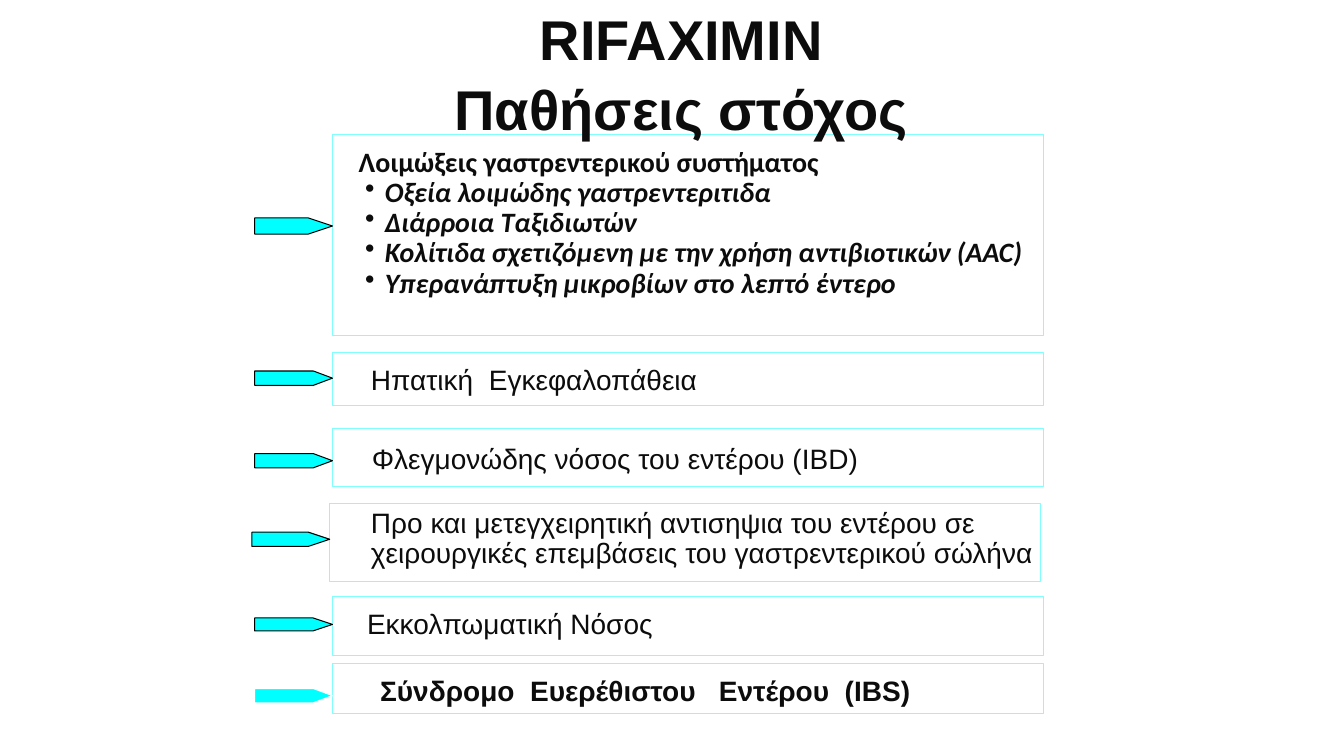
from lxml import etree
from pptx import Presentation
from pptx import util as u
from pptx.dml.color import RGBColor
from pptx.enum import shapes, text
from pptx.oxml import ns

COLORS = {"ink": "0C0C0C", "frame": "81FFFF", "arrow": "00FFFF",
          "outline": "000000", "paper": "FFFFFF"}
FRAME_WIDTH = 17.91
ARROW_WIDTH = 1.96
TEXT_WIDTH = 17.3

INFECTIONS = [
    "Οξεία λοιμώδης γαστρεντεριτιδα",
    "Διάρροια Ταξιδιωτών",
    "Κολίτιδα σχετιζόμενη με την χρήση αντιβιοτικών (AAC)",
    "Υπερανάπτυξη μικροβίων στο λεπτό έντερο",
]


def write(frame, words, *, first=False, size=20, font="Arial", bold=False,
          italic=False, align=text.PP_ALIGN.LEFT, spacing=0.9, before=0,
          bullet=False):
    para = frame.paragraphs[0] if first else frame.add_paragraph()
    para.alignment = align
    para.line_spacing = spacing
    para.space_before = u.Pt(before)
    span = para.add_run()
    span.text = words
    span.font.size = u.Pt(size)
    span.font.name = font
    span.font.bold = bold
    span.font.italic = italic
    span.font.color.rgb = RGBColor.from_string(COLORS["ink"])
    if bullet:
        properties = para._p.get_or_add_pPr()
        properties.set("marL", str(u.Cm(0.66)))
        properties.set("indent", str(u.Cm(-0.5)))
        mark = etree.SubElement(properties, ns.qn("a:buChar"))
        mark.set("char", "•")


class TargetSlide:
    def __init__(self, deck):
        self.page = deck.slides.add_slide(deck.slide_layouts[6])

    def shape(self, kind, left, top, width, height, line, fill=None):
        box = self.page.shapes.add_shape(
            kind, u.Cm(left), u.Cm(top), u.Cm(width), u.Cm(height))
        box.shadow.inherit = False
        box.line.color.rgb = RGBColor.from_string(COLORS[line])
        box.line.width = u.Pt(0.75)
        if fill:
            box.fill.solid()
            box.fill.fore_color.rgb = RGBColor.from_string(COLORS[fill])
        else:
            box.fill.background()
        return box

    def frame(self, left, top, height, fill=None):
        self.shape(shapes.MSO_SHAPE.RECTANGLE, left, top, FRAME_WIDTH, height,
                   "frame", fill)

    def arrow(self, tip, top, height, point, line="outline"):
        box = self.shape(shapes.MSO_SHAPE.PENTAGON, tip - ARROW_WIDTH, top,
                         ARROW_WIDTH, height, line, "arrow")
        box.adjustments[0] = point

    def text(self, left, top, width, height, anchor=text.MSO_ANCHOR.TOP):
        box = self.page.shapes.add_textbox(
            u.Cm(left), u.Cm(top), u.Cm(width), u.Cm(height))
        frame = box.text_frame
        frame.word_wrap = True
        frame.vertical_anchor = anchor
        frame.margin_left = frame.margin_right = 0
        frame.margin_top = frame.margin_bottom = 0
        return frame


def main():
    deck = Presentation()
    deck.slide_width, deck.slide_height = u.Cm(33.87), u.Cm(19.05)
    slide = TargetSlide(deck)

    slide.frame(8.38, 3.4, 5.05)
    slide.arrow(8.38, 5.49, 0.41, 1.5)
    infections = slide.text(9.04, 3.73, TEXT_WIDTH, 4.4)
    write(infections, "Λοιμώξεις γαστρεντερικού συστήματος", first=True,
          font="Calibri", bold=True)
    for infection in INFECTIONS:
        write(infections, infection, font="Calibri", bold=True, italic=True,
              bullet=True)

    conditions = [
        ("Ηπατική  Εγκεφαλοπάθεια",
         (8.38, 8.89, 1.32), (9.35, 0.36, 1.33), (9.35, 9.22), {}),
        ("Φλεγμονώδης νόσος του εντέρου (IBD)",
         (8.38, 10.8, 1.47), (11.43, 0.36, 1.35), (9.37, 11.13),
         {"spacing": 1.0}),
        ("Προ και μετεγχειρητική αντισηψια του εντέρου σε "
         "χειρουργικές επεμβάσεις του γαστρεντερικού σώλήνα",
         (8.31, 12.7, 1.96), (13.41, 0.36, 1.5), (9.35, 12.83), {}),
        ("Εκκολπωματική Νόσος",
         (8.38, 15.04, 1.47), (15.57, 0.33, 1.5), (9.25, 15.37), {}),
        ("Σύνδρομο  Ευερέθιστου   Εντέρου  (IBS)",
         (8.38, 16.71, 1.27, "paper"), (17.35, 0.36, 1.35, "paper"),
         (9.58, 17.07), {"bold": True}),
    ]
    for words, frame, arrow, (left, top), style in conditions:
        slide.frame(*frame)
        slide.arrow(frame[0], *arrow)
        write(slide.text(left, top, TEXT_WIDTH, 0.8), words, first=True, **style)

    title = slide.text(4.72, 0, 24.89, 3.68, text.MSO_ANCHOR.MIDDLE)
    heading = {"size": 40, "bold": True, "spacing": 1.0,
               "align": text.PP_ALIGN.CENTER}
    write(title, "RIFAXIMIN", first=True, **heading)
    write(title, "Παθήσεις στόχος", before=2, **heading)

    deck.save("out.pptx")


if __name__ == "__main__":
    main()
